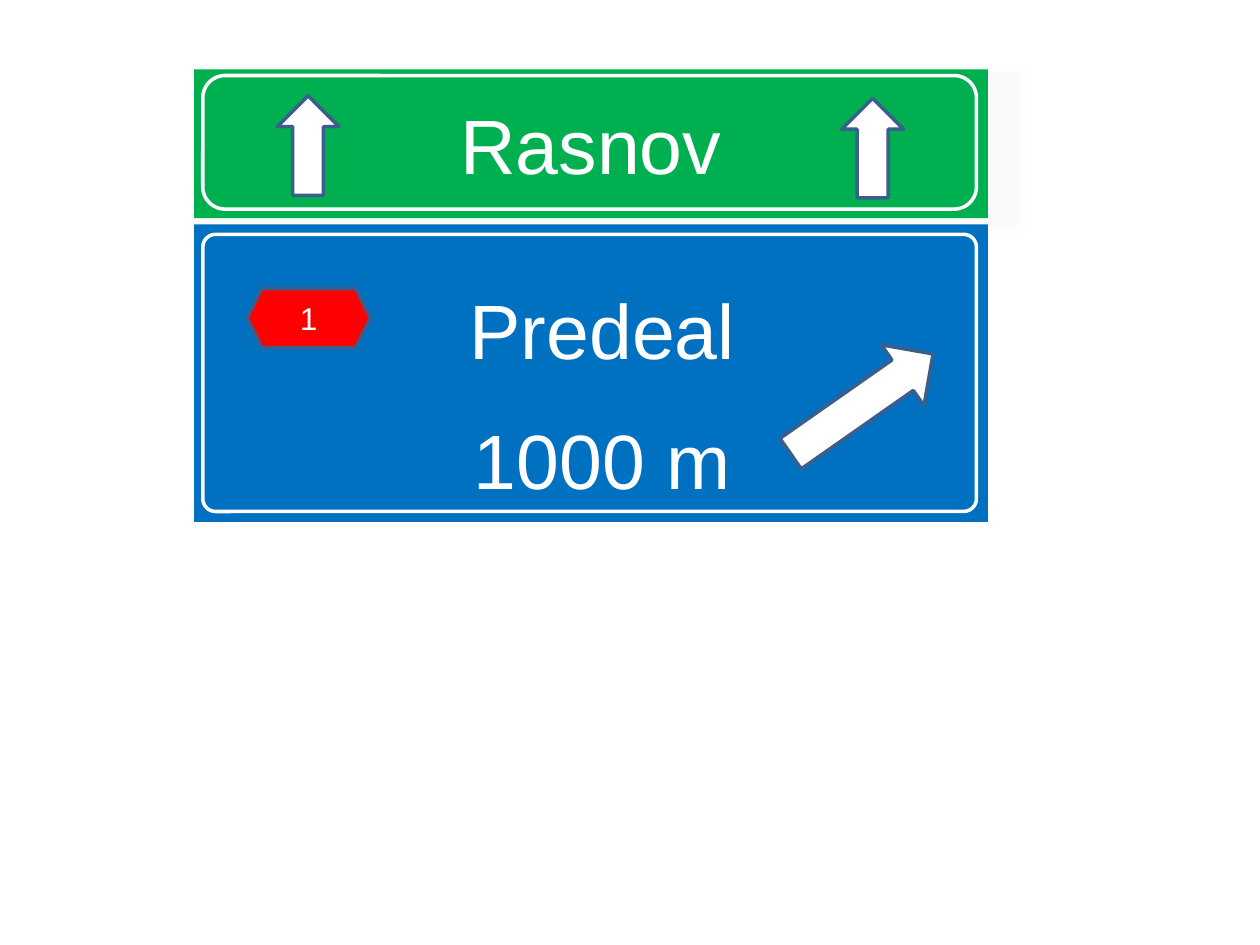
from dataclasses import dataclass
from typing import Optional

from lxml import etree
from pptx import Presentation
from pptx import util as u
from pptx.dml.color import RGBColor
from pptx.enum import shapes, text
from pptx.oxml.ns import qn

WHITE = RGBColor(0xFF, 0xFF, 0xFF)
GREEN = RGBColor(0x00, 0xB0, 0x50)
BLUE = RGBColor(0x00, 0x70, 0xC0)
RED = RGBColor(0xFF, 0x00, 0x00)
STEEL = RGBColor(0x3A, 0x5F, 0x8C)
PALE_GREY = RGBColor(0xF2, 0xF2, 0xF2)
FONT = "Arial"
KIND = shapes.MSO_SHAPE


@dataclass
class Panel:
    top: float
    height: float
    color: RGBColor
    shadow: RGBColor
    lines: list[str]
    anchor: text.MSO_ANCHOR
    margins: tuple[float, float, float, float]  # left, top, right, bottom


@dataclass
class Mark:
    kind: shapes.MSO_SHAPE
    left: float
    top: float
    width: float
    height: float
    fill: Optional[RGBColor] = WHITE
    line: RGBColor = STEEL
    rotation: float = 0
    corner: Optional[float] = None
    label: str = ""


PANEL_LEFT, PANEL_WIDTH = 110.9, 453.6
PANELS = [
    Panel(39.6, 85, GREEN, PALE_GREY, ["Rasnov"],
          text.MSO_ANCHOR.MIDDLE, (7.2, 3.6, 7.2, 3.6)),
    Panel(128.2, 170, BLUE, WHITE, ["Predeal", "1000 m"],
          text.MSO_ANCHOR.TOP, (20.2, 33, 7.2, 7.2)),
]
MARKS = [
    # Direction arrows
    Mark(KIND.RIGHT_ARROW, 442.8, 209.5, 99.4, 42.5, rotation=325),
    Mark(KIND.UP_ARROW, 158.4, 54.7, 35.3, 56.9),
    Mark(KIND.UP_ARROW, 481, 56.2, 35.3, 56.9),
    # Road number
    Mark(KIND.HEXAGON, 141.1, 164.9, 70.6, 33.8, fill=RED, label="1"),
    # Panel borders
    Mark(KIND.ROUNDED_RECTANGLE, 115.9, 43.2, 442.1, 76.3, fill=None, line=WHITE),
    Mark(KIND.ROUNDED_RECTANGLE, 115.9, 133.9, 442.1, 158.4, fill=None, line=WHITE,
         corner=0.046),
]


def place(shape, left: float, top: float, width: float, height: float) -> None:
    shape.left, shape.top = u.Pt(left), u.Pt(top)
    shape.width, shape.height = u.Pt(width), u.Pt(height)


def style_paragraph(paragraph, size: float) -> None:
    paragraph.alignment = text.PP_ALIGN.CENTER
    for run in paragraph.runs:
        run.font.name, run.font.size = FONT, u.Pt(size)
        run.font.color.rgb = WHITE


def add_shadow(shape, color: RGBColor) -> None:
    effects = etree.SubElement(shape.element.spPr, qn("a:effectLst"))
    shadow = etree.SubElement(effects, qn("a:outerShdw"), blurRad=str(u.Pt(5)),
                              sx="103000", sy="103000", algn="tl", rotWithShape="0")
    tint = etree.SubElement(shadow, qn("a:srgbClr"), val=str(color))
    etree.SubElement(tint, qn("a:alpha"), val="40000")


def fill_panel(placeholder, panel: Panel) -> None:
    place(placeholder, PANEL_LEFT, panel.top, PANEL_WIDTH, panel.height)
    placeholder.fill.solid()
    placeholder.fill.fore_color.rgb = panel.color
    add_shadow(placeholder, panel.shadow)
    frame = placeholder.text_frame
    frame.text = "\n".join(panel.lines)
    frame.auto_size = text.MSO_AUTO_SIZE.NONE
    frame.vertical_anchor = panel.anchor
    (frame.margin_left, frame.margin_top,
     frame.margin_right, frame.margin_bottom) = map(u.Pt, panel.margins)
    for index, paragraph in enumerate(frame.paragraphs):
        style_paragraph(paragraph, 44)
        paragraph.space_before = u.Pt(22 if index else 0)


def draw_mark(slide, mark: Mark) -> None:
    shape = slide.shapes.add_shape(mark.kind, 0, 0, 0, 0)
    place(shape, mark.left, mark.top, mark.width, mark.height)
    shape.rotation = mark.rotation
    shape.shadow.inherit = False
    if mark.corner is not None:
        shape.adjustments[0] = mark.corner
    if mark.fill is None:
        shape.fill.background()
    else:
        shape.fill.solid()
        shape.fill.fore_color.rgb = mark.fill
    shape.line.color.rgb = mark.line
    shape.line.width = u.Pt(2)
    if mark.label:
        shape.text_frame.text = mark.label
        shape.text_frame.vertical_anchor = text.MSO_ANCHOR.MIDDLE
        style_paragraph(shape.text_frame.paragraphs[0], 18)


def main() -> None:
    deck = Presentation()
    deck.slide_width, deck.slide_height = u.Pt(720), u.Pt(540)
    slide = deck.slides.add_slide(deck.slide_layouts[0])
    for placeholder, panel in zip(slide.placeholders, PANELS):
        fill_panel(placeholder, panel)
    for mark in MARKS:
        draw_mark(slide, mark)
    deck.save("out.pptx")


if __name__ == "__main__":
    main()
